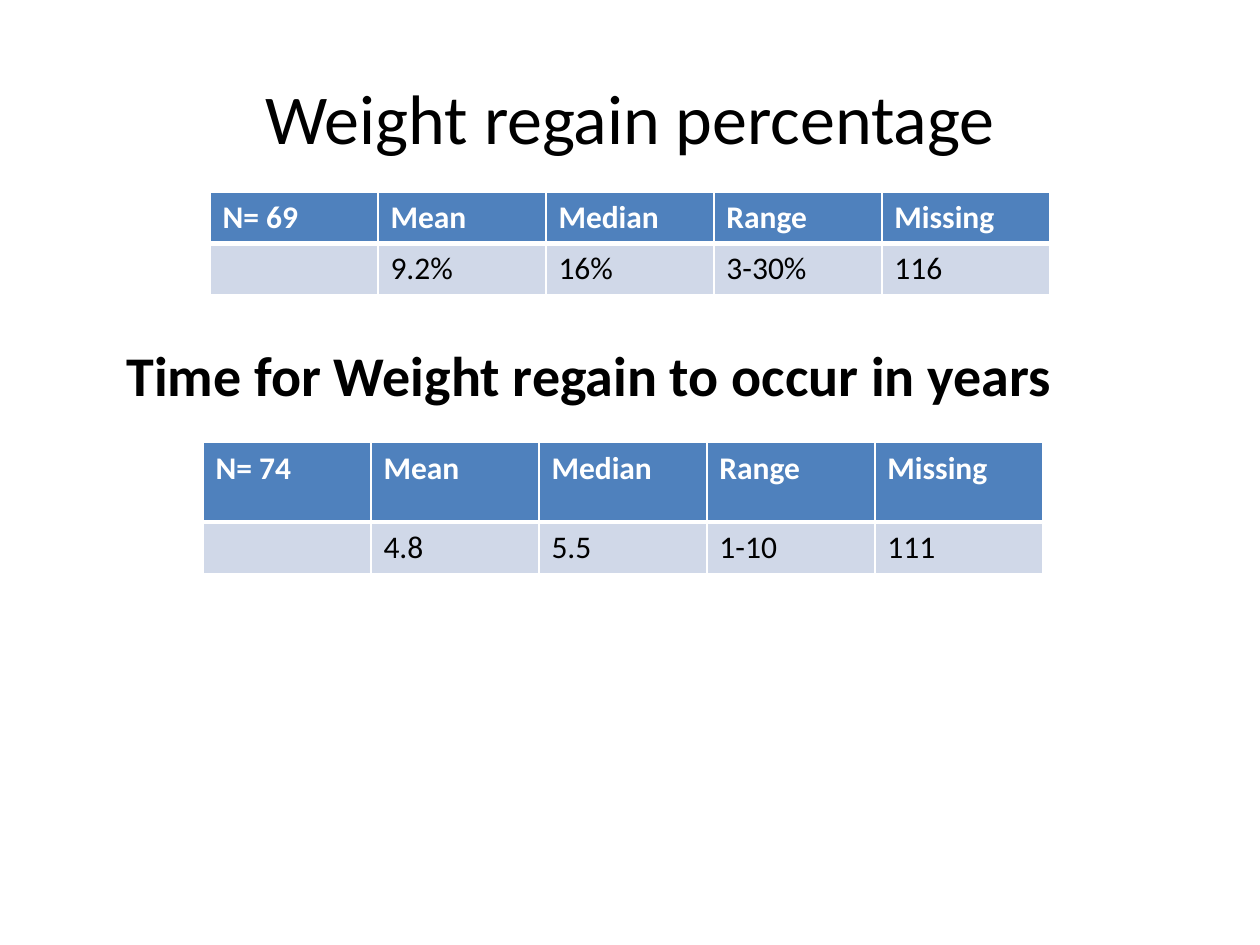
from lxml.etree import SubElement
from pptx import Presentation
from pptx.dml.color import RGBColor
from pptx.enum.text import MSO_ANCHOR as Anchor, PP_ALIGN as Align
from pptx.oxml.ns import qn
from pptx.util import Pt

COLORS = {"header": "4F81BD", "body": "D0D8E8", "white": "FFFFFF", "black": "000000"}
FONT = "Calibri"
TABLE_WIDTH = 480
ROW_HEIGHT = 29.2


def write_text(frame, text, size=18, color="black", bold=False,
               align=Align.LEFT, anchor=Anchor.TOP):
    frame.word_wrap = True
    frame.vertical_anchor = anchor
    paragraph = frame.paragraphs[0]
    paragraph.alignment = align
    run = paragraph.add_run()
    run.text = text
    run.font.name = FONT
    run.font.size = Pt(size)
    run.font.bold = bold
    run.font.color.rgb = RGBColor.from_string(COLORS[color])


def add_heading(slide, box, text, **text_format):
    shape = slide.shapes.add_textbox(*map(Pt, box))
    write_text(shape.text_frame, text, **text_format)


def set_borders(cell, widths):
    """Draw white borders; widths maps a side (L, R, T, B) to points."""
    properties = cell._tc.get_or_add_tcPr()
    for index, (side, width) in enumerate(widths.items()):
        line = properties.makeelement(qn(f"a:ln{side}"), {"w": str(Pt(width))})
        fill = SubElement(line, qn("a:solidFill"))
        SubElement(fill, qn("a:srgbClr"), val=COLORS["white"])
        properties.insert(index, line)


def add_statistics_table(slide, left, top, row_heights, rows):
    column_count = len(rows[0])
    table = slide.shapes.add_table(
        len(rows), column_count, Pt(left), Pt(top),
        Pt(TABLE_WIDTH), Pt(sum(row_heights))).table
    for column in table.columns:
        column.width = Pt(TABLE_WIDTH / column_count)
    for row_index, (height, values) in enumerate(zip(row_heights, rows)):
        table.rows[row_index].height = Pt(height)
        is_header = row_index == 0
        top_width, bottom_width = (1, 3) if is_header else (3, 1)
        for column_index, value in enumerate(values):
            cell = table.cell(row_index, column_index)
            cell.fill.solid()
            cell.fill.fore_color.rgb = RGBColor.from_string(
                COLORS["header" if is_header else "body"])
            set_borders(cell, {"L": 1, "R": 1, "T": top_width, "B": bottom_width})
            if value:
                write_text(cell.text_frame, value, bold=is_header,
                           color="white" if is_header else "black")


def main():
    presentation = Presentation()
    presentation.slide_width, presentation.slide_height = Pt(720), Pt(540)
    slide = presentation.slides.add_slide(presentation.slide_layouts[6])
    labels = ["Mean", "Median", "Range", "Missing"]

    add_heading(slide, (36, 21.6, 648, 90), "Weight regain percentage",
                size=40, align=Align.CENTER, anchor=Anchor.MIDDLE)
    add_statistics_table(slide, 120, 110, [ROW_HEIGHT, ROW_HEIGHT], [
        ["N= 69", *labels],
        ["", "9.2%", "16%", "3-30%", "116"],
    ])
    add_heading(slide, (65.2, 191, 572.4, 46), "Time for Weight regain to occur in years",
                size=32, bold=True)
    add_statistics_table(slide, 116, 253, [45.4, ROW_HEIGHT], [
        ["N= 74", *labels],
        ["", "4.8", "5.5", "1-10", "111"],
    ])
    presentation.save("out.pptx")


if __name__ == "__main__":
    main()
